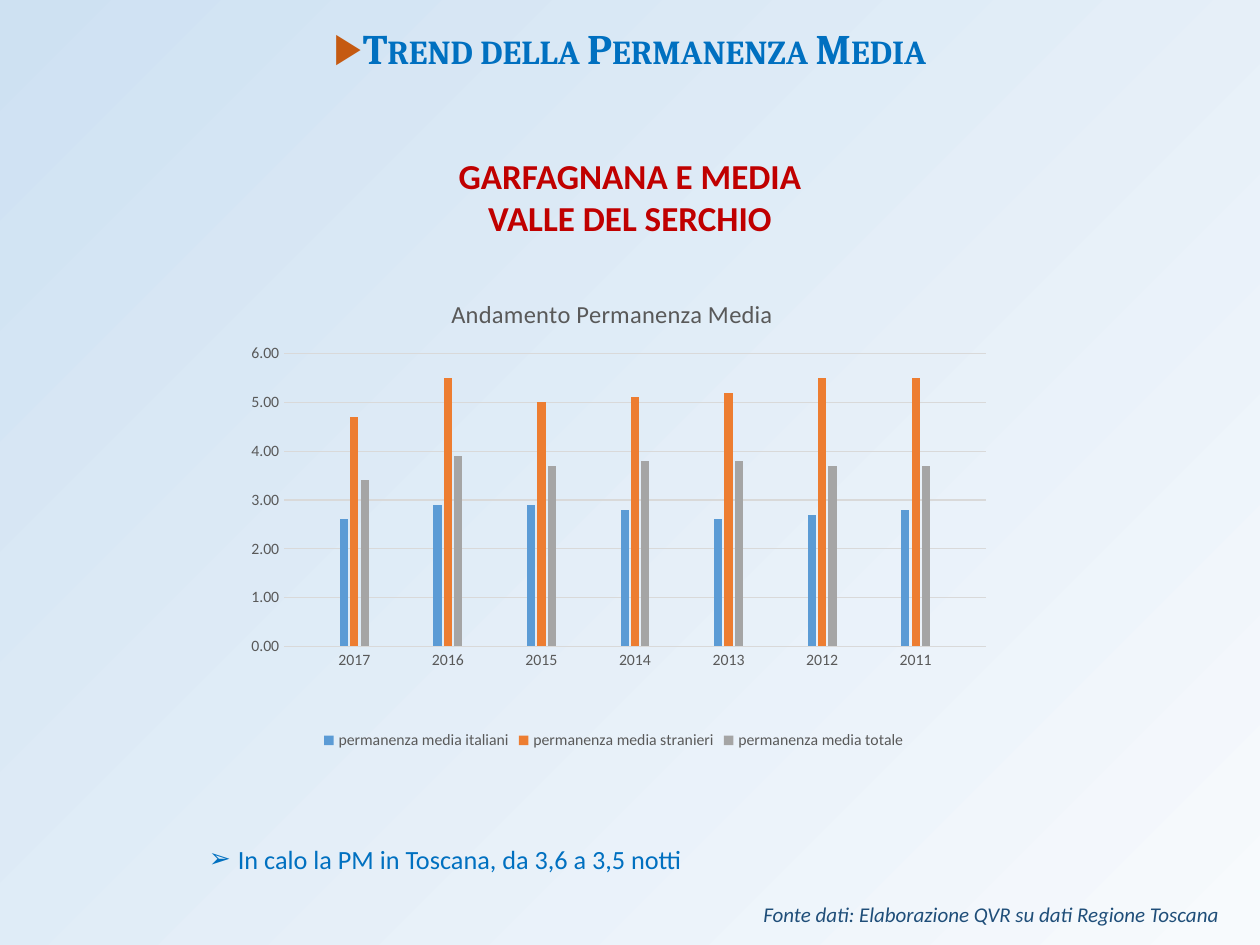
from dataclasses import dataclass

from lxml import etree
from pptx import Presentation
from pptx import util as u
from pptx.chart.data import CategoryChartData
from pptx.dml.color import RGBColor
from pptx.enum import chart as ch, text
from pptx.oxml import parse_xml
from pptx.oxml.ns import nsdecls, qn

COLUMNS, ROWS = 100, 75
CELL = u.Inches(0.1)


@dataclass(frozen=True)
class Theme:
    body: str = "Calibri"
    display: str = "Cambria"
    blue: str = "0070C0"
    navy: str = "1F4E79"
    red: str = "C00000"
    rust: str = "C55A11"
    grey: str = "595959"
    rule: str = "D9D9D9"
    background: tuple = ("F7FAFD", "CEE1F2")
    series: tuple = ("5B9BD5", "ED7D31", "A5A5A5")
    heading_size: float = 24
    area_size: float = 20
    remark_size: float = 15
    source_size: float = 12
    chart_title_size: float = 14
    chart_size: float = 9


THEME = Theme()

YEARS = range(2017, 2010, -1)
STAYS = {
    "permanenza media italiani": (2.6, 2.9, 2.9, 2.8, 2.6, 2.7, 2.8),
    "permanenza media stranieri": (4.7, 5.5, 5, 5.1, 5.2, 5.5, 5.5),
    "permanenza media totale": (3.4, 3.9, 3.7, 3.8, 3.8, 3.7, 3.7),
}


def place(box):
    """Turn (column, row, columns, rows) into slide lengths."""
    return [round(part * CELL) for part in box]


def style(font, size, color, name=THEME.body, bold=False, italic=False):
    font.size, font.name, font.bold, font.italic = u.Pt(size), name, bold, italic
    font.color.rgb = RGBColor.from_string(color)


def add_bullet(para, mark, color=None):
    properties = para._p.get_or_add_pPr()
    indent = u.Inches(0.23)
    properties.set("marL", str(indent))
    properties.set("indent", str(-indent))
    if color:
        tint = etree.SubElement(properties, qn("a:buClr"))
        etree.SubElement(tint, qn("a:srgbClr"), val=color)
    etree.SubElement(properties, qn("a:buFont"), typeface="Arial")
    etree.SubElement(properties, qn("a:buChar"), char=mark)


def add_line(page, box, words, align=text.PP_ALIGN.LEFT, **look):
    frame = page.shapes.add_textbox(*place(box)).text_frame
    frame.word_wrap = True
    frame.text = words
    para = frame.paragraphs[0]
    para.alignment = align
    style(para.runs[0].font, **look)
    return para


def paint_background(page):
    fill = page.background.fill
    fill.gradient()
    fill.gradient_angle = 135
    for stop, color in zip(fill.gradient_stops, THEME.background):
        stop.color.rgb = RGBColor.from_string(color)


def add_heading(page, box):
    para = add_line(page, box, "Trend della Permanenza Media", text.PP_ALIGN.CENTER,
                    size=THEME.heading_size, color=THEME.blue,
                    name=THEME.display, bold=True)
    para.runs[0].font._element.set("cap", "small")
    add_bullet(para, "▶", THEME.rust)


def add_area_name(page, box):
    para = add_line(page, box, "GARFAGNANA E MEDIA VALLE DEL SERCHIO",
                    text.PP_ALIGN.CENTER, size=THEME.area_size,
                    color=THEME.red, bold=True)
    para.space_after = u.Pt(4.5)


def add_remark(page, box):
    para = add_line(page, box, "In calo la PM in Toscana, da 3,6 a 3,5 notti",
                    size=THEME.remark_size, color=THEME.blue)
    add_bullet(para, "➢")


def add_source(page, box):
    add_line(page, box, "Fonte dati: Elaborazione QVR su dati Regione Toscana",
             size=THEME.source_size, color=THEME.navy, italic=True)


def spaced(values, gap):
    """Put a gap before, between and after the values."""
    return [gap] + [item for value in values for item in (value, gap)]


def set_layout(owner, target=None, **shares):
    """Fix a chart part at shares of the chart's size."""
    for old in owner.findall(qn("c:layout")):
        owner.remove(old)
    layout = parse_xml(f"<c:layout {nsdecls('c')}><c:manualLayout/></c:layout>")
    entries = {"layoutTarget": target} if target else {}
    entries.update(xMode="edge", yMode="edge", **shares)
    for tag, value in entries.items():
        etree.SubElement(layout[0], qn(f"c:{tag}"), val=str(value))
    return layout


def style_axes(chart):
    rule = RGBColor.from_string(THEME.rule)
    category, value = chart.category_axis, chart.value_axis
    for axis in (category, value):
        axis.major_tick_mark = axis.minor_tick_mark = ch.XL_TICK_MARK.NONE
        style(axis.tick_labels.font, THEME.chart_size, THEME.grey)
    value.minimum_scale, value.maximum_scale, value.major_unit = 0, 6, 1
    value.tick_labels.number_format = "0.00"
    value.tick_labels.number_format_is_linked = False
    value.format.line.fill.background()
    for line in (category.format.line, value.major_gridlines.format.line):
        line.color.rgb, line.width = rule, u.Pt(0.75)


def add_stay_chart(page, box):
    data = CategoryChartData(number_format="0.00")
    data.categories = spaced(map(str, YEARS), "")
    for name, values in STAYS.items():
        data.add_series(name, spaced(values, None))
    chart = page.shapes.add_chart(
        ch.XL_CHART_TYPE.COLUMN_CLUSTERED, *place(box), data).chart
    style(chart.font, THEME.chart_size, THEME.grey)

    title = chart.chart_title
    title.text_frame.text = "Andamento Permanenza Media"
    style(title.text_frame.paragraphs[0].runs[0].font,
          THEME.chart_title_size, THEME.grey)
    title._element.find(qn("c:tx")).addnext(
        set_layout(title._element, x=0.29, y=0.03))
    area = chart._chartSpace.chart.plotArea
    area.insert(0, set_layout(area, "inner", x=0.085, y=0.158, w=0.884, h=0.615))

    style_axes(chart)
    plot = chart.plots[0]
    plot.gap_width, plot.overlap, plot.vary_by_categories = 219, -27, False
    for series, color in zip(plot.series, THEME.series):
        series.format.fill.solid()
        series.format.fill.fore_color.rgb = RGBColor.from_string(color)
    chart.has_legend = True
    chart.legend.position = ch.XL_LEGEND_POSITION.BOTTOM
    chart.legend.include_in_layout = False
    style(chart.legend.font, THEME.chart_size, THEME.grey)


def main():
    deck = Presentation()
    deck.slide_width, deck.slide_height = COLUMNS * CELL, ROWS * CELL
    page = deck.slides.add_slide(deck.slide_layouts[6])
    paint_background(page)
    add_heading(page, (0, 1.3, COLUMNS, 5))
    add_remark(page, (15.6, 66.4, 42.1, 3.5))
    add_source(page, (59.6, 71.1, 41.1, 3))
    add_area_name(page, (33.2, 11.8, 33.6, 7.7))
    add_stay_chart(page, (17.2, 22.1, 63, 37.8))
    deck.save("out.pptx")


if __name__ == "__main__":
    main()
